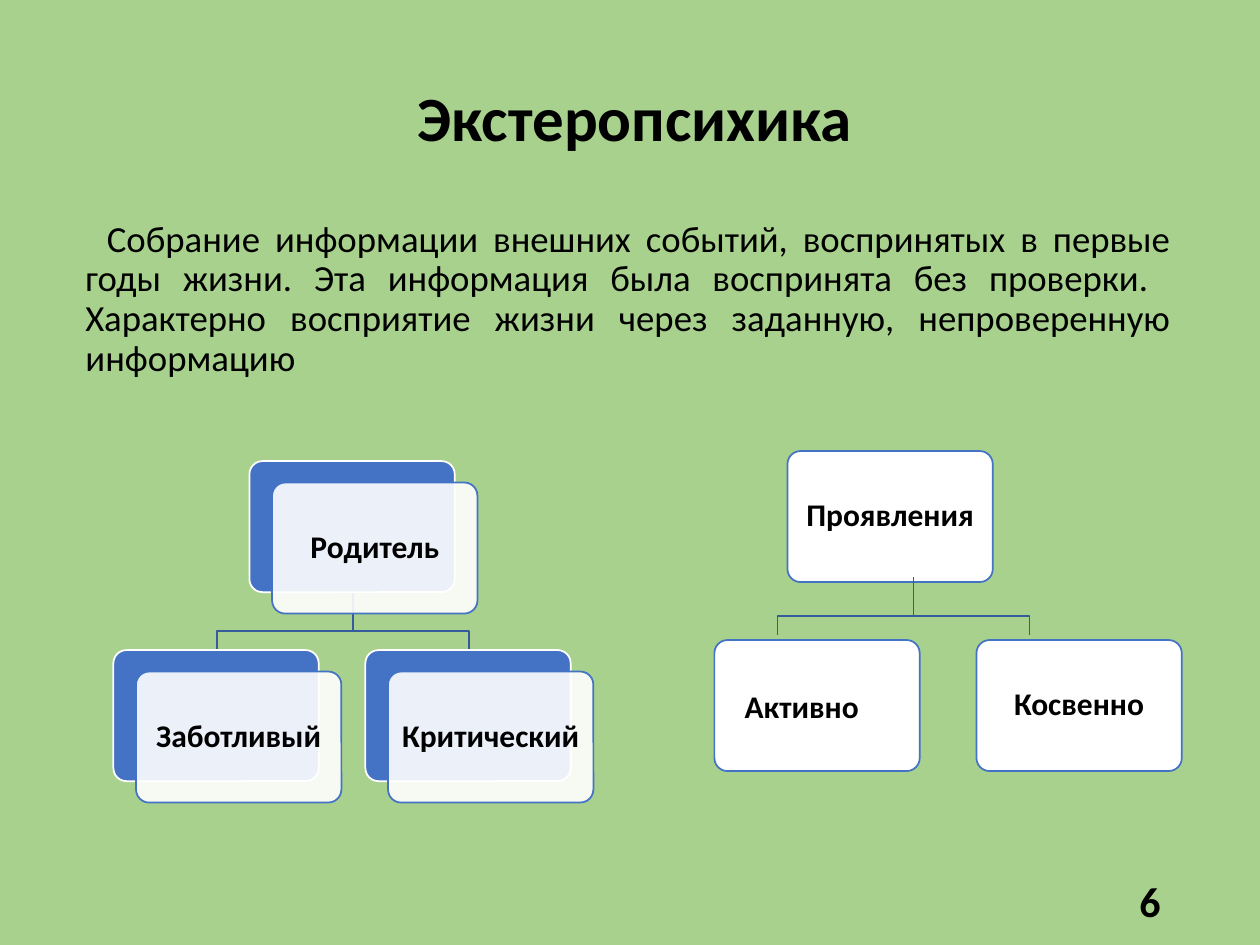
from pptx import Presentation
from pptx.dml.color import RGBColor
from pptx.enum.shapes import MSO_SHAPE
from pptx.enum.text import MSO_ANCHOR, PP_ALIGN
from pptx.oxml.ns import qn
from pptx.util import Inches, Pt
from lxml.etree import SubElement

GREEN, BLUE, LINK_BLUE = "A9D18E", "4472C4", "365B9D"
WHITE, BLACK = "FFFFFF", "000000"
CARD_W, CARD_H = 1.63, 1.04
FRONT_DX, FRONT_DY = 0.18, 0.17


def color(hex_string):
    return RGBColor.from_string(hex_string)


def write(shape, text, size, bold=False, align=PP_ALIGN.CENTER,
          anchor=MSO_ANCHOR.MIDDLE, spacing=0.9):
    frame = shape.text_frame
    frame.word_wrap = True
    frame.vertical_anchor = anchor
    frame.text = text
    paragraph = frame.paragraphs[0]
    paragraph.alignment = align
    paragraph.line_spacing = spacing
    font = paragraph.runs[0].font
    font.name, font.size, font.bold = "Calibri", Pt(size), bold
    font.color.rgb = color(BLACK)
    return paragraph


def add_text(slide, box, text, size, **style):
    textbox = slide.shapes.add_textbox(*map(Inches, box))
    return write(textbox, text, size, **style)


def add_card(slide, left, top, fill, outline, opacity=100):
    card = slide.shapes.add_shape(
        MSO_SHAPE.ROUNDED_RECTANGLE,
        Inches(left), Inches(top), Inches(CARD_W), Inches(CARD_H))
    card.adjustments[0] = 0.1
    card.shadow.inherit = False
    card.fill.solid()
    card.fill.fore_color.rgb = color(fill)
    if opacity < 100:
        rgb = card.fill._xPr.find(qn("a:solidFill"))[0]
        SubElement(rgb, qn("a:alpha")).set("val", str(opacity * 1000))
    card.line.color.rgb = color(outline)
    card.line.width = Pt(1)
    return card


def add_label_card(slide, left, top, label, opacity=100, **style):
    card = add_card(slide, left, top, WHITE, BLUE, opacity)
    frame = card.text_frame
    frame.margin_left = frame.margin_right = Inches(0.07)
    frame.margin_top = frame.margin_bottom = Inches(0.07)
    write(card, label, 18, bold=True, **style)
    return card


def add_layered_card(slide, left, top, label):
    """A blue card with a translucent labelled card shifted over it."""
    add_card(slide, left, top, BLUE, WHITE)
    add_label_card(slide, left + FRONT_DX, top + FRONT_DY, label, opacity=90)


def add_branches(slide, x, top):
    """Two elbow lines from one point down to the left and right child."""
    for child_dx in (0.92, -1.08):
        bend, end = top + 0.31, top + 0.46
        points = [(x, bend), (x + child_dx, bend), (x + child_dx, end)]
        builder = slide.shapes.build_freeform(Inches(x), Inches(top))
        builder.add_line_segments(
            [(Inches(px), Inches(py)) for px, py in points], close=False)
        branch = builder.convert_to_shape()
        branch.shadow.inherit = False
        branch.fill.background()
        branch.line.color.rgb = color(LINK_BLUE)
        branch.line.width = Pt(1)


def add_parent_tree(slide, left, top):
    add_branches(slide, left + 1.9, top + CARD_H)
    add_layered_card(slide, left + 1.08, top, "Родитель")
    for dx, label in ((0, "Заботливый"), (2, "Критический")):
        add_layered_card(slide, left + dx, top + 1.5, label)


def add_manifestation_tree(slide, left, top):
    add_label_card(slide, left + 0.58, top, "Проявления")
    active = add_label_card(slide, left, top + 1.5, "Активно", align=PP_ALIGN.LEFT)
    active.text_frame.margin_left = Inches(0.21)
    active.text_frame.margin_top = Inches(0.12)
    add_label_card(slide, left + 2.08, top + 1.5, "Косвенно")
    add_branches(slide, left + 1.58, top + 1)


def add_description(slide, box):
    paragraph = add_text(
        slide, box,
        "Собрание информации внешних событий, воспринятых в первые годы жизни. "
        "Эта информация была воспринята без проверки.  Характерно восприятие "
        "жизни через заданную, непроверенную информацию",
        21, align=PP_ALIGN.JUSTIFY, anchor=MSO_ANCHOR.TOP)
    paragraph.space_before = Pt(7.5)
    properties = paragraph._p.get_or_add_pPr()
    properties.set("marL", str(Inches(0.19)))
    properties.set("indent", str(Inches(0.17)))


def main():
    presentation = Presentation()
    presentation.slide_width, presentation.slide_height = Inches(10), Inches(7.5)
    slide = presentation.slides.add_slide(presentation.slide_layouts[6])
    slide.background.fill.solid()
    slide.background.fill.fore_color.rgb = color(GREEN)

    add_text(slide, (0.73, 0.36, 8.62, 1.21), "Экстеропсихика", 36, bold=True)
    add_description(slide, (0.39, 1.7, 9, 1.55))
    add_text(slide, (7.06, 6.95, 2.25, 0.4), "6", 24, bold=True,
             align=PP_ALIGN.RIGHT, spacing=1.0)
    add_parent_tree(slide, 0.9, 3.66)
    add_manifestation_tree(slide, 5.67, 3.58)
    presentation.save("out.pptx")


if __name__ == "__main__":
    main()
